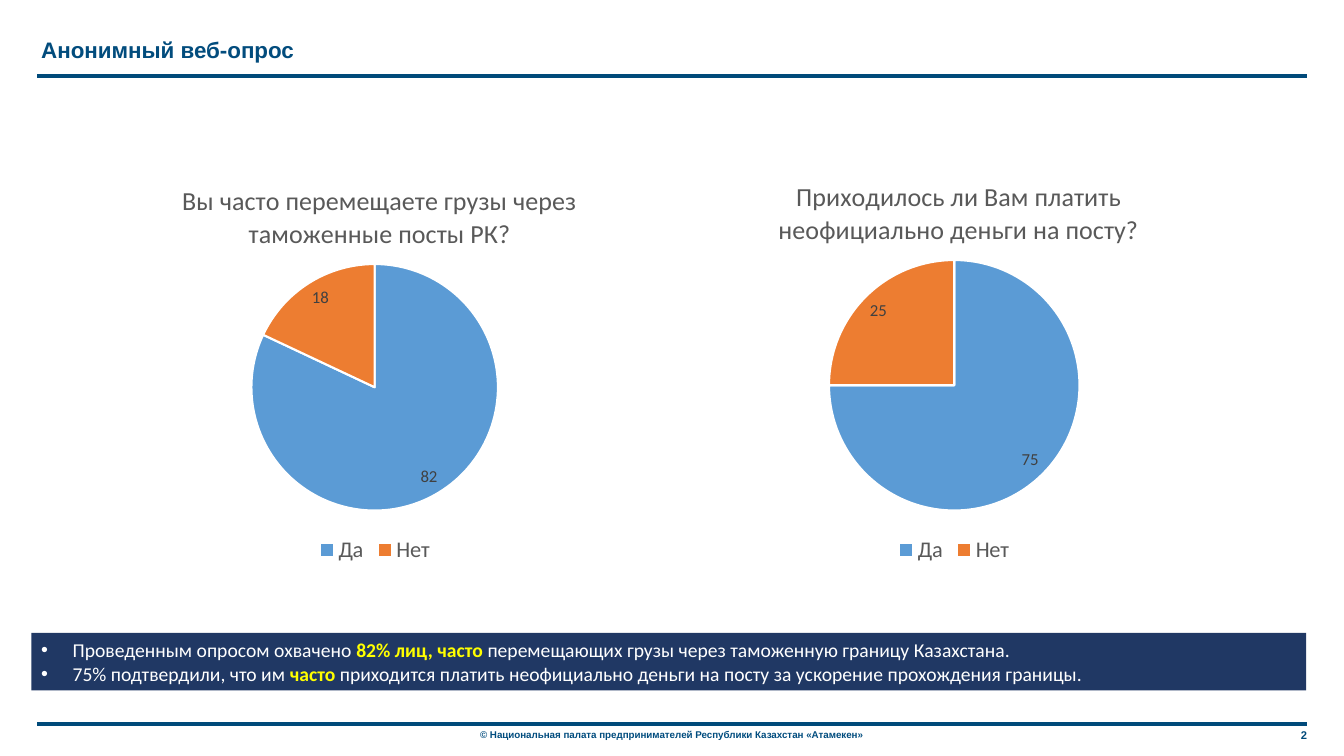
from dataclasses import dataclass

from lxml.etree import SubElement
from pptx import Presentation
from pptx.chart.data import CategoryChartData
from pptx.dml.color import RGBColor
from pptx.enum.chart import XL_CHART_TYPE, XL_LABEL_POSITION, XL_LEGEND_POSITION
from pptx.enum.shapes import MSO_CONNECTOR, MSO_SHAPE
from pptx.enum.text import MSO_ANCHOR, PP_ALIGN
from pptx.oxml import parse_xml
from pptx.oxml.ns import nsdecls, qn
from pptx.oxml.xmlchemy import BaseOxmlElement
from pptx.slide import Slide
from pptx.text.text import Font
from pptx.util import Cm, Pt

COLOURS = {
    "rule": "004A7A", "heading": "024C7D", "copyright": "004C7E",
    "yes": "5B9BD5", "no": "ED7D31", "chart_text": "595959", "label": "404040",
    "panel": "203864", "white": "FFFFFF", "accent": "FFFF00",
}
CHART_TOP, CHART_WIDTH, CHART_HEIGHT = 3.96, 14.22, 10.36
BULLET_INDENT = Cm(0.79)


@dataclass(frozen=True)
class Label:
    text: str
    left: float
    top: float
    width: float
    height: float
    size: float
    colour: str
    alignment: PP_ALIGN


@dataclass(frozen=True)
class Poll:
    """A question with its answers; offsets are fractions of the chart."""
    question: str
    answers: tuple[int, int]
    left: float
    title_offset: tuple[float, float]
    pie_top: float
    pie_height: float


@dataclass(frozen=True)
class Finding:
    before: str
    emphasis: str
    after: str


LABELS = [
    Label("2", 31.39, 18.24, 1.8, 0.58, 8, "rule", PP_ALIGN.RIGHT),
    Label("© Национальная палата предпринимателей Республики Казахстан «Атамекен»",
          10.97, 18.24, 11.91, 0.56, 7, "copyright", PP_ALIGN.CENTER),
    Label("Анонимный веб-опрос", 0.79, 0.79, 22.28, 0.94, 16, "heading", PP_ALIGN.LEFT),
]
POLLS = [
    Poll("Вы часто перемещаете грузы через таможенные посты РК?", (82, 18),
         2.34, (0.15, 0.05), 0.26, 0.6),
    Poll("Приходилось ли Вам платить неофициально деньги на посту?", (75, 25),
         16.94, (0.18, 0.04), 0.25, 0.61),
]
FINDINGS = [
    Finding("Проведенным опросом охвачено ", "82% лиц, часто ",
            "перемещающих грузы через таможенную границу Казахстана."),
    Finding("75% подтвердили, что им ", "часто",
            " приходится платить неофициально деньги на посту за ускорение прохождения границы."),
]


def colour_of(name: str) -> RGBColor:
    return RGBColor.from_string(COLOURS[name])


def set_font(font: Font, name: str, size: float, colour: str, bold: bool = False) -> None:
    font.name, font.size, font.bold = name, Pt(size), bold
    font.color.rgb = colour_of(colour)


def add_rule(slide: Slide, top: float) -> None:
    rule = slide.shapes.add_connector(
        MSO_CONNECTOR.STRAIGHT, Cm(0.94), Cm(top), Cm(32.94), Cm(top))
    rule.line.color.rgb = colour_of("rule")
    rule.line.width = Pt(2.5)
    SubElement(rule.element.spPr, qn("a:effectLst"))


def add_label(slide: Slide, label: Label) -> None:
    box = slide.shapes.add_textbox(
        Cm(label.left), Cm(label.top), Cm(label.width), Cm(label.height))
    box.text_frame.word_wrap = True
    paragraph = box.text_frame.paragraphs[0]
    paragraph.text = label.text
    paragraph.alignment = label.alignment
    set_font(paragraph.font, "Arial", label.size, label.colour, bold=True)


def set_layout(parent: BaseOxmlElement, index: int, target: str, **fractions: float) -> None:
    """Place a chart part by hand, at fractions of the chart's size."""
    for previous in parent.findall(qn("c:layout")):
        parent.remove(previous)
    modes = "".join(f'<c:{key}Mode val="edge"/>' for key in "xy")
    values = "".join(f'<c:{key} val="{value:.3f}"/>' for key, value in fractions.items())
    parent.insert(index, parse_xml(
        f'<c:layout {nsdecls("c")}><c:manualLayout>{target}{modes}{values}'
        "</c:manualLayout></c:layout>"))


def add_poll(slide: Slide, poll: Poll) -> None:
    data = CategoryChartData()
    data.categories = ["Да", "Нет"]
    data.add_series("Series 1", poll.answers)
    chart = slide.shapes.add_chart(
        XL_CHART_TYPE.PIE, Cm(poll.left), Cm(CHART_TOP),
        Cm(CHART_WIDTH), Cm(CHART_HEIGHT), data).chart
    chart.font.name, chart.font.size = "Calibri", Pt(10)

    chart.has_title = True
    title = chart.chart_title
    title.include_in_layout = False
    paragraph = title.text_frame.paragraphs[0]
    paragraph.text = poll.question
    set_font(paragraph.font, "Calibri", 18.6, "chart_text")
    title_left, title_top = poll.title_offset
    set_layout(title._element, 1, "", x=title_left, y=title_top)

    chart.has_legend = True
    chart.legend.position = XL_LEGEND_POSITION.BOTTOM
    chart.legend.include_in_layout = False
    set_font(chart.legend.font, "Calibri", 16, "chart_text")

    plot = chart.plots[0]
    plot.vary_by_categories = True
    for index, answer in enumerate(("yes", "no")):
        point = plot.series[0].points[index]
        point.format.fill.solid()
        point.format.fill.fore_color.rgb = colour_of(answer)
        point.format.line.color.rgb = colour_of("white")
        point.format.line.width = Pt(1.5)
    plot.has_data_labels = True
    plot.data_labels.show_value = True
    plot.data_labels.show_percentage = False
    plot.data_labels.position = XL_LABEL_POSITION.INSIDE_END
    set_font(plot.data_labels.font, "Calibri", 12, "label")

    pie_width = poll.pie_height * CHART_HEIGHT / CHART_WIDTH
    set_layout(chart._chartSpace.chart.plotArea, 0, '<c:layoutTarget val="inner"/>',
               x=(1 - pie_width) / 2, y=poll.pie_top, w=pie_width, h=poll.pie_height)


def add_findings(slide: Slide) -> None:
    panel = slide.shapes.add_shape(
        MSO_SHAPE.RECTANGLE, Cm(0.79), Cm(15.95), Cm(32.13), Cm(1.45))
    panel.shadow.inherit = False
    panel.fill.solid()
    panel.fill.fore_color.rgb = colour_of("panel")
    panel.line.fill.background()
    frame = panel.text_frame
    frame.word_wrap = True
    frame.vertical_anchor = MSO_ANCHOR.MIDDLE
    for index, finding in enumerate(FINDINGS):
        paragraph = frame.add_paragraph() if index else frame.paragraphs[0]
        paragraph.alignment = PP_ALIGN.LEFT
        properties = paragraph._p.get_or_add_pPr()
        properties.set("marL", str(BULLET_INDENT))
        properties.set("indent", str(-BULLET_INDENT))
        SubElement(properties, qn("a:buFont"), typeface="Arial")
        SubElement(properties, qn("a:buChar"), char="•")
        set_font(paragraph.font, "Calibri", 14, "white")
        for text in (finding.before, finding.emphasis, finding.after):
            run = paragraph.add_run()
            run.text = text
            emphasised = text == finding.emphasis
            set_font(run.font, "Calibri", 14, "accent" if emphasised else "white", emphasised)


def main() -> None:
    presentation = Presentation()
    presentation.slide_width, presentation.slide_height = Cm(33.87), Cm(19.05)
    slide = presentation.slides.add_slide(presentation.slide_layouts[6])
    for top in (1.91, 18.24):
        add_rule(slide, top)
    for label in LABELS:
        add_label(slide, label)
    for poll in POLLS:
        add_poll(slide, poll)
    add_findings(slide)
    presentation.save("out.pptx")


if __name__ == "__main__":
    main()
